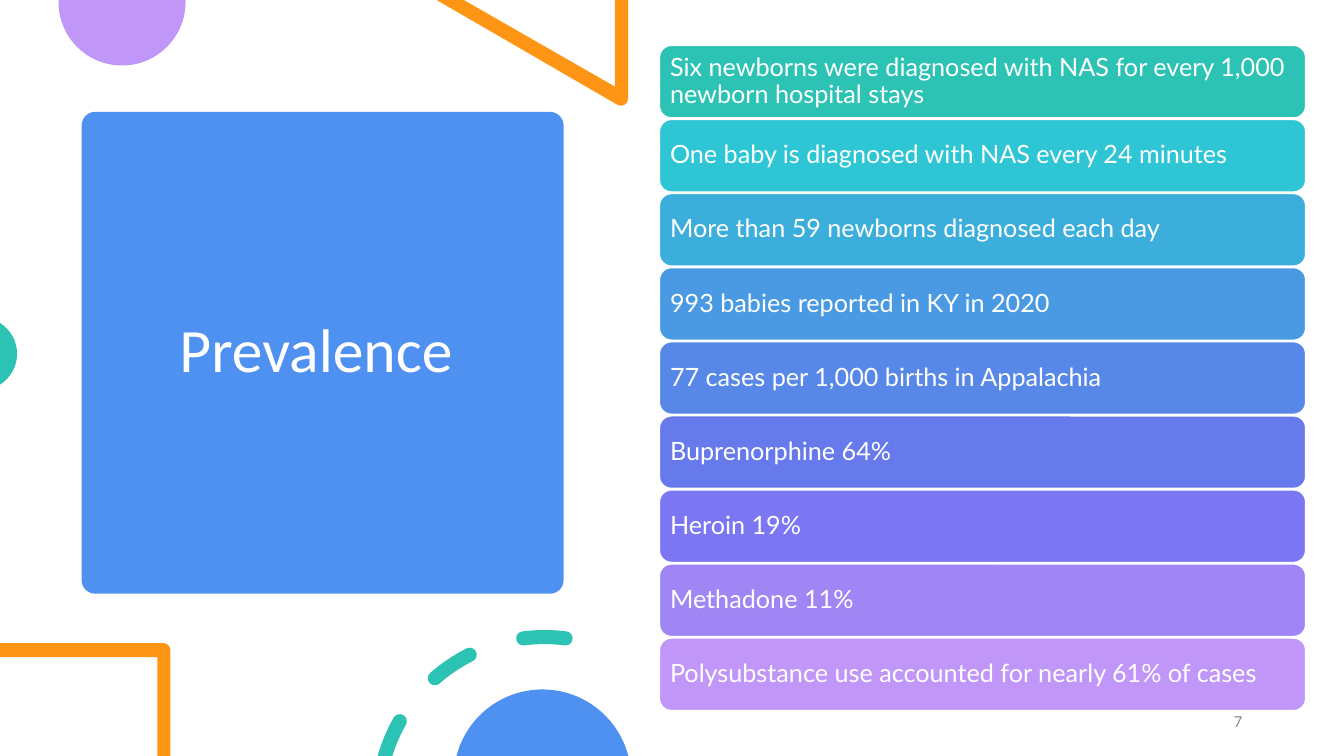
from dataclasses import dataclass
from math import acos, cos, degrees, radians, sin, tan

from pptx import Presentation
from pptx.dml.color import RGBColor
from pptx.enum.shapes import MSO_SHAPE
from pptx.enum.text import MSO_ANCHOR, MSO_AUTO_SIZE, PP_ALIGN
from pptx.oxml.ns import qn
from pptx.util import Inches, Pt

RECTANGLE, ROUNDED = MSO_SHAPE.RECTANGLE, MSO_SHAPE.ROUNDED_RECTANGLE
MIDDLE = MSO_ANCHOR.MIDDLE
NO_AUTOFIT = MSO_AUTO_SIZE.NONE
LEFT, CENTER, RIGHT = PP_ALIGN.LEFT, PP_ALIGN.CENTER, PP_ALIGN.RIGHT

WIDTH, HEIGHT = 13.33, 7.5
WHITE, BLUE, TEAL = "FFFFFF", "4E91F0", "2CC3B4"
PURPLE, ORANGE, GREY = "C097F8", "FF9514", "8C8C8C"
BAR_TOP, BAR_PITCH = 0.45, 0.735
RING_X, RING_Y, RING_RADIUS, DASH_RADIUS = 5.4, 7.97, 1.65, 0.07

Point = tuple[float, float]
Segment = tuple[Point, ...]
Contour = list[Segment]


@dataclass
class Fact:
    text: str
    color: str


@dataclass
class Outline:
    contours: list[Contour]
    color: str


FACTS = [
    Fact("Six newborns were diagnosed with NAS for every 1,000 newborn hospital stays", TEAL),
    Fact("One baby is diagnosed with NAS every 24 minutes", "2EC5D5"),
    Fact("More than 59 newborns diagnosed each day", "3CAEDB"),
    Fact("993 babies reported in KY in 2020", "499AE2"),
    Fact("77 cases per 1,000 births in Appalachia", "5888E7"),
    Fact("Buprenorphine 64%", "677AEC"),
    Fact("Heroin 19%", "7B76F1"),
    Fact("Methadone 11%", "A086F5"),
    Fact("Polysubstance use accounted for nearly 61% of cases", PURPLE),
]


def polar(x: float, y: float, radius: float, angle: float) -> Point:
    return x + radius * sin(radians(angle)), y - radius * cos(radians(angle))


def arc(x: float, y: float, radius: float, start: float, end: float) -> Contour:
    half = (end - start) / 2
    reach = 4 / 3 * tan(radians(half) / 4) * radius
    segments: Contour = [(polar(x, y, radius, start),)]
    for a, b in ((start, start + half), (start + half, end)):
        first, last = polar(x, y, radius, a), polar(x, y, radius, b)
        segments.append((polar(*first, reach, a + 90), polar(*last, reach, b - 90), last))
    return segments


def ring_dash(start: float, end: float) -> Contour:
    outer, inner = RING_RADIUS + DASH_RADIUS, RING_RADIUS - DASH_RADIUS
    outer_edge, inner_edge = (-degrees(acos((RING_Y - HEIGHT) / r)) for r in (outer, inner))
    dash = [
        *arc(RING_X, RING_Y, outer, max(start, outer_edge), end),
        *arc(*polar(RING_X, RING_Y, RING_RADIUS, end), DASH_RADIUS, end, end + 180)[1:],
        *arc(RING_X, RING_Y, inner, end, max(start, inner_edge))[1:],
    ]
    if start > inner_edge:
        center = polar(RING_X, RING_Y, RING_RADIUS, start)
        dash += arc(*center, DASH_RADIUS, start + 180, start + 360)[1:]
    return dash


def lines(*points: Point) -> Contour:
    return [(point,) for point in points]


OUTLINES = [
    Outline([arc(1.21, 0.02, 0.63, 88.2, 271.8)], PURPLE),
    Outline([lines((6.23, 0), (6.1, 0), (6.1, 0.86), (4.6, 0), (4.33, 0))
             + arc(6.16, 0.98, 0.07, 205, 90)], ORANGE),
    Outline([arc(-0.19, 3.51, 0.36, 32, 148)], TEAL),
    Outline([lines((0, 6.38), (0, 6.52), (1.56, 6.52), (1.56, HEIGHT), (1.69, HEIGHT))
             + arc(1.62, 6.45, 0.07, 90, 0)], ORANGE),
    Outline([ring_dash(-90, -60.4), ring_dash(-41.2, -26.7), ring_dash(-7.3, 7.3)], TEAL),
    Outline([arc(5.38, 7.72, 0.88, -75.5, 75.5)], BLUE),
]


def rgb(color: str) -> RGBColor:
    return RGBColor.from_string(color)


def paint(shape, color: str) -> None:
    shape.shadow.inherit = False
    shape.fill.solid()
    shape.fill.fore_color.rgb = rgb(color)
    shape.line.fill.background()


def write(shape, text: str, font: str, size: float, color: str, align) -> None:
    frame = shape.text_frame
    frame.word_wrap = True
    frame.auto_size = NO_AUTOFIT
    frame.vertical_anchor = MIDDLE
    frame.text = text
    para = frame.paragraphs[0]
    para.alignment = align
    para.line_spacing = 0.9
    para.font.name = font
    para.font.size = Pt(size)
    para.font.color.rgb = rgb(color)


def add_block(page, kind, left: float, top: float, width: float, height: float, color: str):
    shape = page.shapes.add_shape(
        kind, Inches(left), Inches(top), Inches(width), Inches(height)
    )
    paint(shape, color)
    return shape


def add_outline(page, outline: Outline) -> None:
    builder = None
    for contour in outline.contours:
        start, *rest = [(Inches(x), Inches(y)) for x, y in (part[-1] for part in contour)]
        if builder is None:
            builder = page.shapes.build_freeform(*start)
        else:
            builder.move_to(*start)
        builder.add_line_segments(rest, close=True)
    shape = builder.convert_to_shape()
    steps = list(shape.element.iter(qn("a:lnTo")))
    segments = [part for contour in outline.contours for part in contour[1:]]
    for step, (*controls, _) in zip(steps, segments):
        if controls:
            step.tag = qn("a:cubicBezTo")
        for index, (x, y) in enumerate(controls):
            place = {"x": str(Inches(x) - shape.left), "y": str(Inches(y) - shape.top)}
            step.insert(index, step.makeelement(qn("a:pt"), place))
    paint(shape, outline.color)


def add_fact(page, index: int, fact: Fact) -> None:
    top = BAR_TOP + index * BAR_PITCH
    bar = add_block(page, ROUNDED, 6.54, top, 6.41, 0.72, fact.color)
    bar.line.color.rgb = rgb(WHITE)
    bar.line.width = Pt(1)
    write(bar, fact.text, "Lato", 18, WHITE, LEFT)
    frame = bar.text_frame
    frame.margin_left = frame.margin_right = Inches(0.07)
    frame.margin_top = frame.margin_bottom = Inches(0.07)


def add_title(page) -> None:
    backdrop = add_block(page, RECTANGLE, 0, 0, WIDTH, HEIGHT, WHITE)
    panel = add_block(page, ROUNDED, 0.81, 1.11, 4.78, 4.78, BLUE)
    panel.adjustments[0] = 0.028
    title = page.shapes.title
    title.left, title.top = Inches(1.05), Inches(1.22)
    title.width, title.height = Inches(4.31), Inches(4.56)
    write(title, "Prevalence ", "Calibri", 44, WHITE, CENTER)
    for shape in (backdrop, panel):
        title.element.addprevious(shape.element)


def add_page_number(page) -> None:
    box = page.shapes.add_textbox(Inches(11.49), Inches(6.95), Inches(0.93), Inches(0.4))
    write(box, "7", "Calibri", 12, GREY, RIGHT)
    para = box.text_frame.paragraphs[0]
    para.line_spacing = 1.0
    para.space_after = Pt(6)


def main() -> None:
    deck = Presentation()
    deck.slide_width, deck.slide_height = Inches(WIDTH), Inches(HEIGHT)
    page = deck.slides.add_slide(deck.slide_layouts[5])
    add_title(page)
    for outline in OUTLINES:
        add_outline(page, outline)
    for index, fact in enumerate(FACTS):
        add_fact(page, index, fact)
    add_page_number(page)
    deck.save("out.pptx")


if __name__ == "__main__":
    main()
